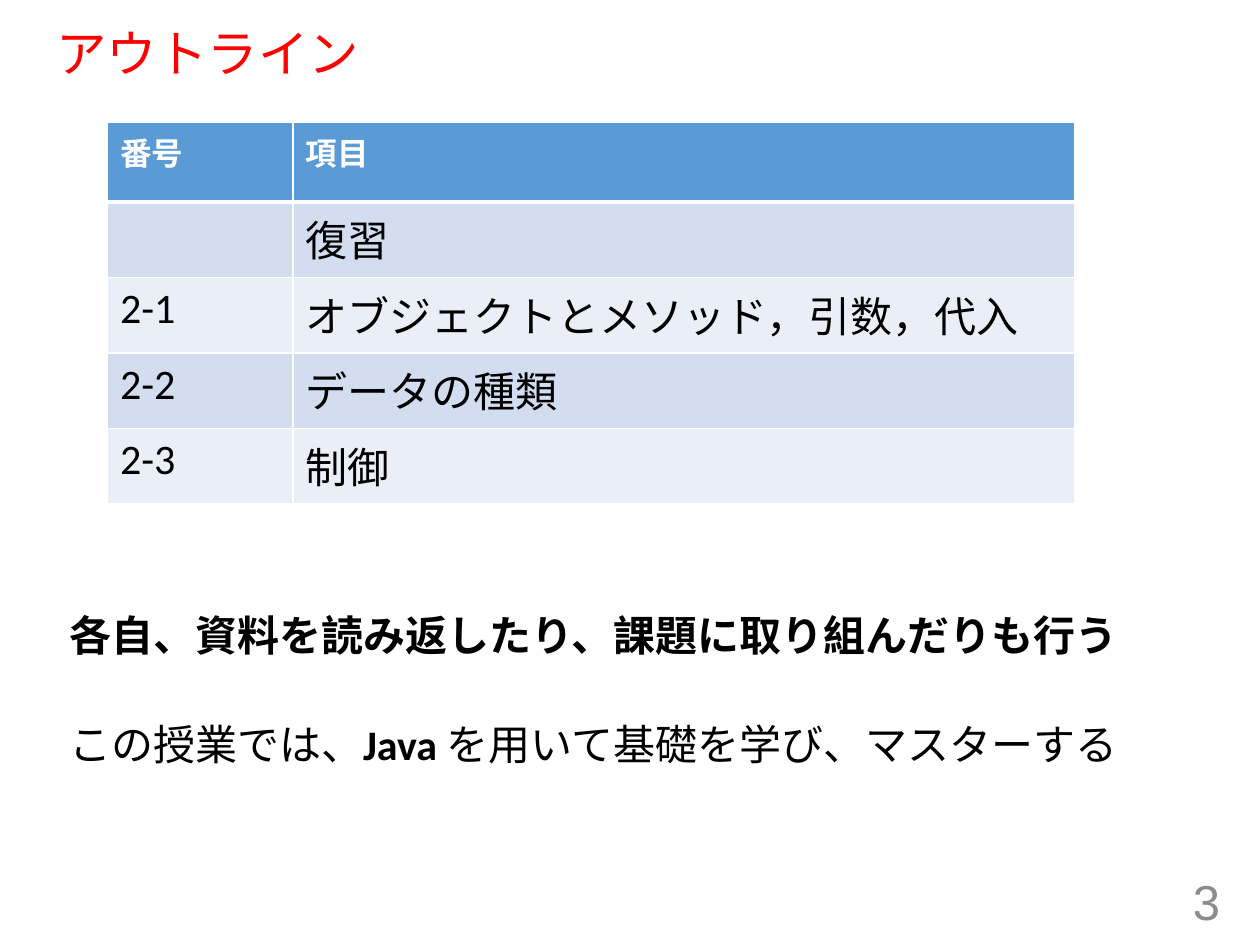
from lxml import etree
from pptx import Presentation
from pptx.dml.color import RGBColor
from pptx.enum.text import MSO_ANCHOR, PP_ALIGN
from pptx.oxml.ns import qn
from pptx.util import Pt

LEFT, RIGHT = PP_ALIGN.LEFT, PP_ALIGN.RIGHT
TOP, MIDDLE = MSO_ANCHOR.TOP, MSO_ANCHOR.MIDDLE

COLORS = {"title": "FF0000", "number": "8C8C8C", "text": "000000", "white": "FFFFFF",
          "header": "5B9BD5", "odd": "D2DEEF", "even": "EAEFF7"}

TITLE = {"name": "Arial", "size": Pt(28.8), "color": "title"}
NUMBER = {"name": "Arial", "size": Pt(28), "color": "number"}
HEADER = {"name": "Calibri", "size": Pt(18), "color": "white", "bold": True}
BODY = {"name": "Calibri", "size": Pt(24), "color": "text", "bold": False}
STRONG = {**BODY, "bold": True}

OUTLINE = [
    ("番号", "項目"),
    ("", "復習"),
    ("2-1", "オブジェクトとメソッド，引数，代入"),
    ("2-2", "データの種類"),
    ("2-3", "制御"),
]


def rgb(name):
    return RGBColor.from_string(COLORS[name])


def add_run(p, text, style):
    r = p.add_run()
    r.text = text
    for key, value in style.items():
        if key == "color":
            r.font.color.rgb = rgb(value)
        else:
            setattr(r.font, key, value)


def add_text(s, box, runs, align=LEFT, anchor=TOP, line_spacing=None):
    tf = s.shapes.add_textbox(*map(Pt, box)).text_frame
    tf.word_wrap = True
    tf.vertical_anchor = anchor
    p = tf.paragraphs[0]
    p.alignment = align
    p.line_spacing = line_spacing
    for text, style in runs:
        add_run(p, text, style)


def set_border(cell, side, width):
    ln = etree.SubElement(cell._tc.get_or_add_tcPr(), qn(f"a:ln{side}"), w=str(Pt(width)))
    fill = etree.SubElement(ln, qn("a:solidFill"))
    etree.SubElement(fill, qn("a:srgbClr"), val=COLORS["white"])


def add_outline_table(s, box, number_width=106, header_height=45.4):
    x, y, w, h = box
    table = s.shapes.add_table(len(OUTLINE), 2, *map(Pt, box)).table
    table.columns[0].width = Pt(number_width)
    table.columns[1].width = Pt(w - number_width)
    row_height = (h - header_height) / (len(OUTLINE) - 1)
    for i, texts in enumerate(OUTLINE):
        table.rows[i].height = Pt(row_height if i else header_height)
        fill = ("even", "odd")[i % 2] if i else "header"
        for j, text in enumerate(texts):
            cell = table.cell(i, j)
            for side in "LRTB":
                thick = (side == "B" and i == 0) or (side == "T" and i == 1)
                set_border(cell, side, 3 if thick else 1)
            cell.fill.solid()
            cell.fill.fore_color.rgb = rgb(fill)
            if text:
                add_run(cell.text_frame.paragraphs[0], text, BODY if i else HEADER)


def add_notice(s, box, second_offset=62):
    x, y, w, h = box
    add_text(s, box, [("各自、資料を読み返したり、課題に取り組んだりも行う", STRONG)])
    add_text(s, (x, y + second_offset, w, h),
             [("この授業では、", BODY), ("Java ", STRONG),
              ("を用いて基礎を学び、マスターする", BODY)])


def main():
    prs = Presentation()
    prs.slide_width, prs.slide_height = Pt(720), Pt(540)
    s = prs.slides.add_slide(prs.slide_layouts[6])
    add_text(s, (25.2, 13.7, 666, 36.7), [("アウトライン", TITLE)],
             anchor=MIDDLE, line_spacing=0.9)
    add_outline_table(s, (61.4, 70, 552.6, 218))
    add_notice(s, (32.4, 344.9, 620, 36))
    add_text(s, (542.2, 500.4, 162, 28.8), [("3", NUMBER)], align=RIGHT, anchor=MIDDLE)
    prs.save("out.pptx")


if __name__ == "__main__":
    main()
